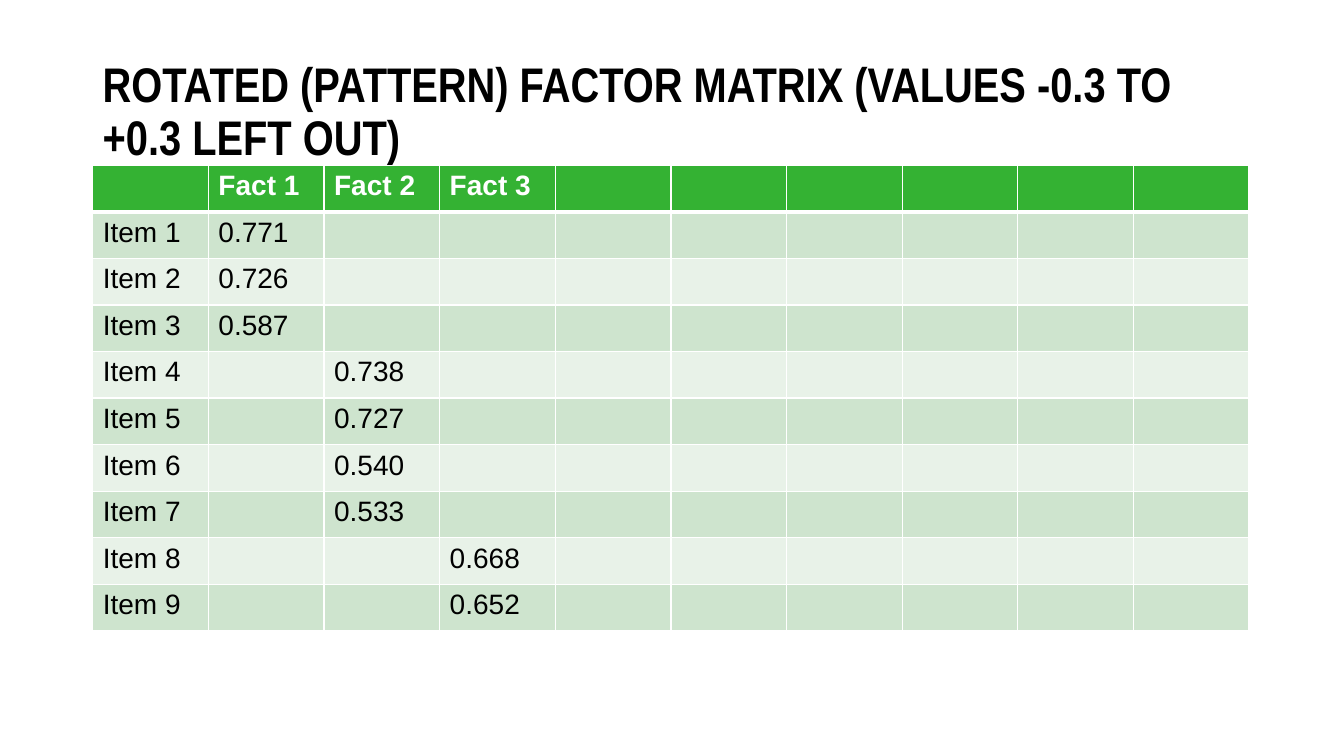
from lxml import etree
from pptx import Presentation, util as u
from pptx.dml.color import RGBColor
from pptx.enum import text as t
from pptx.oxml import ns

PX = 9144  # EMU per px, 100 px to the inch

BLACK = RGBColor(0x00, 0x00, 0x00)
WHITE = RGBColor(0xFF, 0xFF, 0xFF)
HEADER_GREEN = RGBColor(0x34, 0xB2, 0x33)
BAND_DARK = RGBColor(0xCE, 0xE4, 0xCE)
BAND_LIGHT = RGBColor(0xE8, 0xF2, 0xE8)

COLUMN_COUNT = 10
FACTORS = ["Fact 1", "Fact 2", "Fact 3"]
# Loadings of consecutive items, grouped by factor
LOADINGS = [
    ["0.771", "0.726", "0.587"],
    ["0.738", "0.727", "0.540", "0.533"],
    ["0.668", "0.652"],
]


def px(length):
    return u.Emu(length * PX)


def write_text(frame, content, *, font="Arial", size=20, color=BLACK,
               bold=False, line_spacing=None):
    paragraph = frame.paragraphs[0]
    paragraph.line_spacing = line_spacing
    run = paragraph.add_run()
    run.text = content
    run.font.name = font
    run.font.size = u.Pt(size)
    run.font.color.rgb = color
    run.font.bold = bold


def add_title(slide, content, left, top, width, height):
    frame = slide.shapes.add_textbox(px(left), px(top), px(width), px(height)).text_frame
    frame.word_wrap = True
    frame.vertical_anchor = t.MSO_ANCHOR.MIDDLE
    write_text(frame, content, font="Arial Narrow", size=34.7, bold=True, line_spacing=0.9)


def set_borders(cell, **widths):
    """Draw white cell borders; the fill must be set afterwards."""
    properties = cell._tc.get_or_add_tcPr()
    for side in "LRTB":
        line = etree.SubElement(properties, ns.qn(f"a:ln{side}"),
                                w=str(u.Pt(widths.get(side, 1))))
        fill = etree.SubElement(line, ns.qn("a:solidFill"))
        etree.SubElement(fill, ns.qn("a:srgbClr"), val=str(WHITE))


def matrix_rows():
    """Return the header row, then one row per item with its loading."""
    rows = [["", *FACTORS]]
    for factor, values in enumerate(LOADINGS, start=1):
        for value in values:
            row = [f"Item {len(rows)}"] + [""] * len(FACTORS)
            row[factor] = value
            rows.append(row)
    return rows


def add_matrix(slide, rows, left, top, width, height):
    table = slide.shapes.add_table(len(rows), COLUMN_COUNT, px(left), px(top),
                                   px(width), px(height)).table
    for r, row in enumerate(rows):
        header = r == 0
        band = BAND_DARK if r % 2 else BAND_LIGHT
        # A thick rule separates the header from the items
        thick = {0: {"B": 3}, 1: {"T": 3}}.get(r, {})
        for c in range(COLUMN_COUNT):
            cell = table.cell(r, c)
            set_borders(cell, **thick)
            cell.fill.solid()
            cell.fill.fore_color.rgb = HEADER_GREEN if header else band
            if c < len(row) and row[c]:
                write_text(cell.text_frame, row[c], bold=header,
                           color=WHITE if header else BLACK)


def main():
    presentation = Presentation()
    presentation.slide_width = px(1333)
    presentation.slide_height = px(750)
    slide = presentation.slides.add_slide(presentation.slide_layouts[6])

    # Title
    add_title(slide, "ROTATED (PATTERN) FACTOR MATRIX (VALUES -0.3 TO +0.3 LEFT OUT)",
              92, 40, 1150, 145)

    # Factor matrix
    add_matrix(slide, matrix_rows(), 92, 164, 1147, 462)

    presentation.save("out.pptx")


if __name__ == "__main__":
    main()
